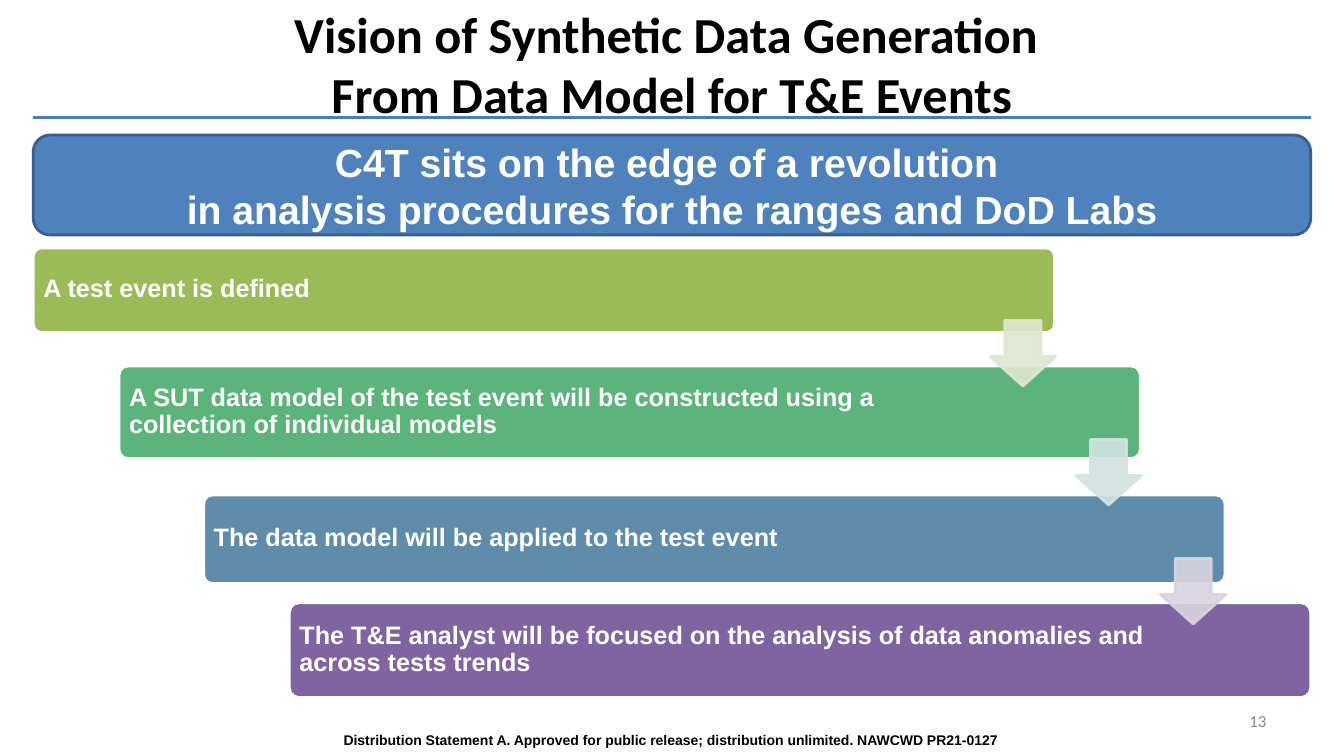
"""Build a slide that shows four descending steps of synthetic data generation."""
from lxml.etree import SubElement
from pptx import Presentation
from pptx.dml.color import RGBColor
from pptx.enum.shapes import MSO_CONNECTOR, MSO_SHAPE
from pptx.enum.text import MSO_ANCHOR, PP_ALIGN
from pptx.oxml.ns import qn
from pptx.util import Pt

PX = 9144
color = RGBColor.from_string


def add_shape(kind, box, fill, line, adjustments=()):
    shape = slide.shapes.add_shape(kind, *[value * PX for value in box])
    shape.shadow.inherit = False
    shape.fill.solid()
    shape.fill.fore_color.rgb = color(fill)
    shape.line.color.rgb = color(line)
    shape.line.width = Pt(2)
    for index, value in enumerate(adjustments):
        shape.adjustments[index] = value
    return shape


def write(shape, text, alignment, anchor, hue, font_values):
    frame = shape.text_frame
    frame.word_wrap = True
    frame.vertical_anchor = anchor
    frame.text = text
    for paragraph in frame.paragraphs:
        paragraph.alignment = alignment
        for run in paragraph.runs:
            run.font.color.rgb = color(hue)
            for name, value in font_values.items():
                setattr(run.font, name, value)
    return frame


presentation = Presentation()
presentation.slide_width = 1333 * PX
presentation.slide_height = 750 * PX
slide = presentation.slides.add_slide(presentation.slide_layouts[6])

rule = slide.shapes.add_connector(
    MSO_CONNECTOR.STRAIGHT, 33 * PX, 117 * PX, 1300 * PX, 117 * PX)
rule.line.color.rgb = color("4A7DBA")
rule.line.width = Pt(2.25)
SubElement(rule._element.spPr, qn("a:effectLst"))

labels = [
    ((15, 721, 1300, 27),
     "Distribution Statement A. Approved for public release; "
     "distribution unlimited. NAWCWD PR21-0127",
     PP_ALIGN.CENTER, MSO_ANCHOR.TOP, "000000",
     {"name": "Arial", "size": Pt(10), "bold": True}),
    ((0, 13, 1333, 100),
     "Vision of Synthetic Data Generation \vFrom Data Model for T&E Events",
     PP_ALIGN.CENTER, MSO_ANCHOR.MIDDLE, "000000",
     {"name": "Calibri", "size": Pt(36), "bold": True}),
    ((1220, 695, 46, 40), "13", PP_ALIGN.RIGHT, MSO_ANCHOR.MIDDLE, "898989",
     {"name": "Calibri", "size": Pt(12)}),
]
for box, *label in labels:
    write(slide.shapes.add_textbox(*[value * PX for value in box]), *label)

steps = [
    (33, 246, 84, 898, "9BBB59", "A test event is defined"),
    (118, 363, 92, 858, "5CB37C",
     "A SUT data model of the test event will be constructed using "
     "a collection of individual models"),
    (202, 491, 88, 860, "608CAB",
     "The data model will be applied to the test event"),
    (287, 598, 94, 858, "8064A2",
     "The T&E analyst will be focused on the analysis of data anomalies "
     "and across tests trends"),
]
for left, top, height, text_width, fill, text in steps:
    add_shape(MSO_SHAPE.ROUNDED_RECTANGLE, (left, top, 1013, height),
              fill, "FFFFFF", [0.1])
    text_box = slide.shapes.add_textbox(
        (left + 3) * PX, (top + 2) * PX, text_width * PX, (height - 5) * PX)
    frame = write(text_box, text, PP_ALIGN.LEFT, MSO_ANCHOR.MIDDLE, "FFFFFF",
                  {"name": "Arial", "size": Pt(18), "bold": True})
    frame.paragraphs[0].line_spacing = 0.9
    for side in ("left", "top", "right", "bottom"):
        setattr(frame, f"margin_{side}", 7 * PX)

for index, tint in enumerate(["DEE7D1", "D2E3E2", "D8D3E0"]):
    box = (steps[index][0] + 949, 318 + 118 * index, 65, 65)
    arrow = add_shape(MSO_SHAPE.DOWN_ARROW, box, tint, tint)
    arrow.adjustments[0] = 0.55
    arrow.adjustments[1] = 0.45
    for element in arrow._element.spPr.iter(qn("a:srgbClr")):
        SubElement(element, qn("a:alpha"), val="90000")

banner = add_shape(MSO_SHAPE.ROUNDED_RECTANGLE, (33, 134, 1267, 99),
                   "4F81BD", "3A5F8C")
write(banner,
      "C4T sits on the edge of a revolution \n"
      "in analysis procedures for the ranges and DoD Labs",
      PP_ALIGN.CENTER, MSO_ANCHOR.MIDDLE, "FFFFFF",
      {"name": "Arial", "size": Pt(28), "bold": True})

presentation.save("out.pptx")
